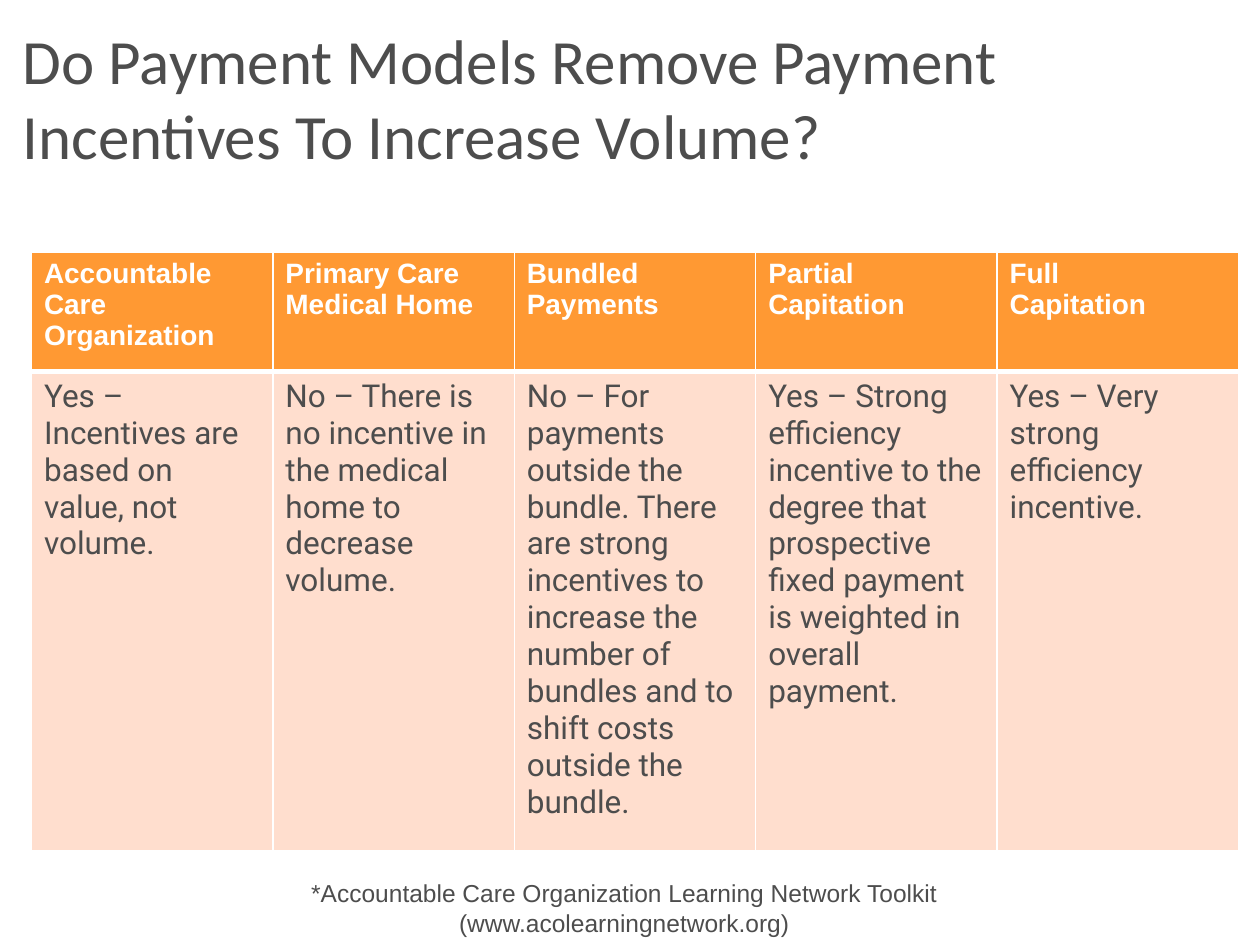
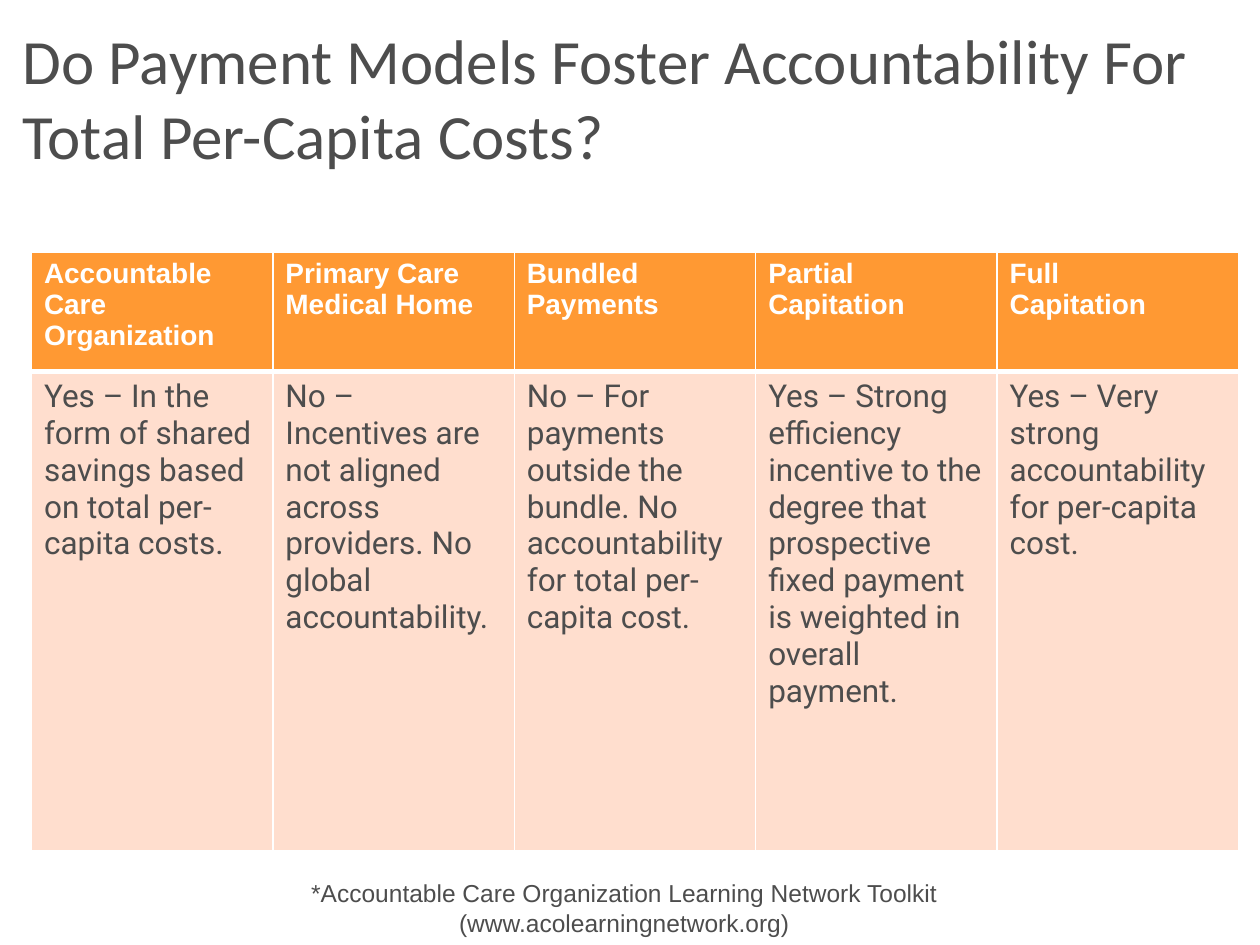
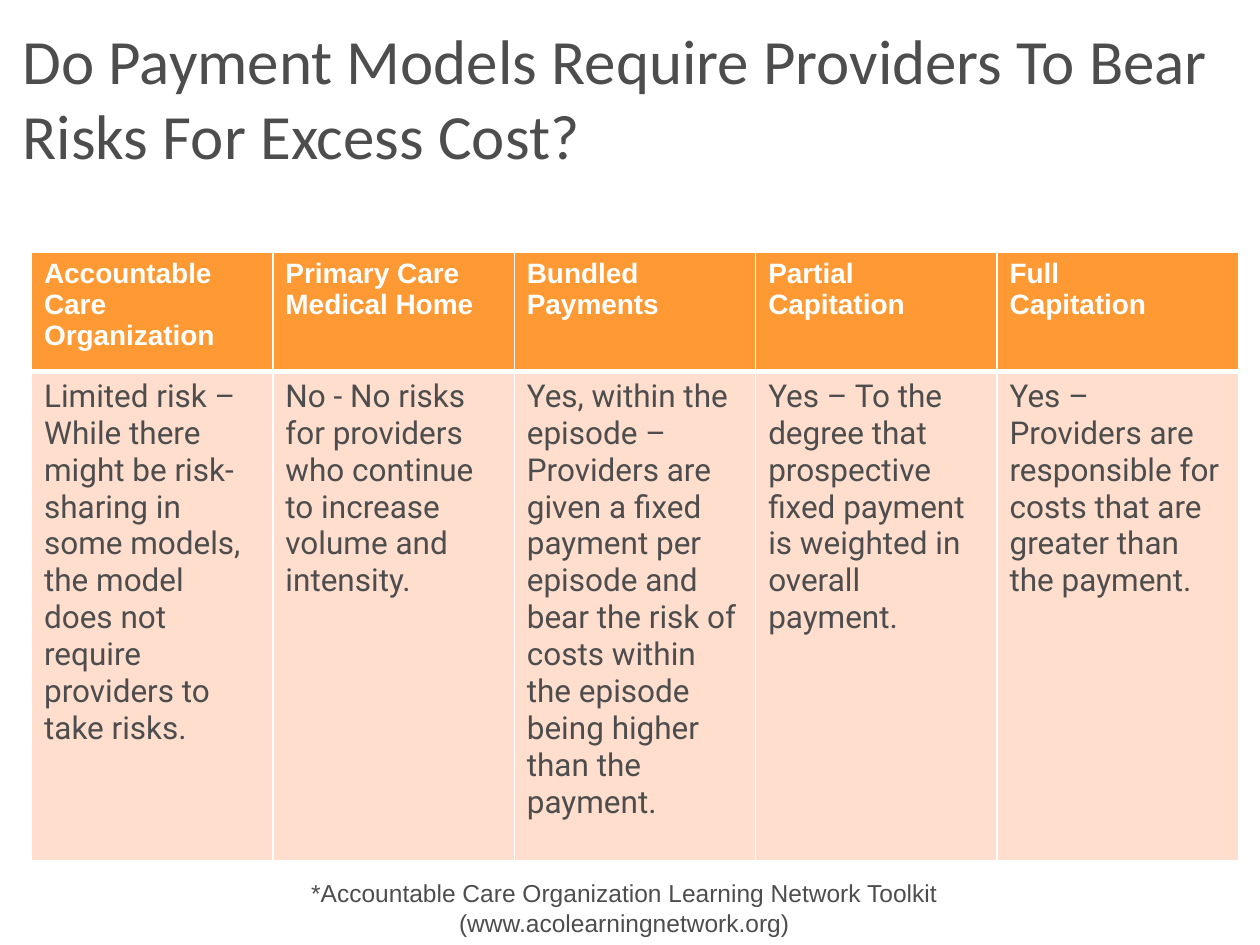
from dataclasses import dataclass

from lxml import etree
from pptx import Presentation
from pptx.dml.color import RGBColor
from pptx.enum import text
from pptx.oxml import ns
from pptx.util import Inches, Pt


@dataclass(frozen=True)
class Theme:
    ink: str = "4D4D4D"
    white: str = "FFFFFF"
    header_fill: str = "FF9933"
    body_fill: str = "FFDECE"
    title_font: str = "Calibri"
    label_font: str = "Arial"
    body_font: str = "Roboto"
    title_size: int = 36
    header_size: int = 16
    body_size: int = 18
    source_size: int = 14
    thin_line: int = 1
    thick_line: int = 3


theme = Theme()

HEADERS = [
    "Accountable Care Organization",
    "Primary Care Medical Home",
    "Bundled Payments",
    "Partial\nCapitation",
    "Full\nCapitation",
]
SOURCE = "*Accountable Care Organization Learning Network Toolkit (www.acolearningnetwork.org)"
HEADER_HEIGHT = 0.95

# Title, height of the answer row, answers by payment model
QUESTIONS = [
    (
        "Do Payment Models Remove Payment Incentives To Increase Volume?",
        3.8,
        [
            "Yes – Incentives are based on value, not volume.",
            "No – There is no incentive in the medical home to decrease volume.",
            "No – For payments outside the bundle. There are strong incentives to increase "
            "the number of bundles and to shift costs outside the bundle.",
            "Yes – Strong efficiency incentive to the degree that prospective fixed payment "
            "is weighted in overall payment.",
            "Yes – Very strong efficiency incentive.",
        ],
    ),
    (
        "Do Payment Models Foster Accountability For Total Per-Capita Costs?",
        3.8,
        [
            "Yes – In the form of shared savings based on total per-capita costs.",
            "No – Incentives are not aligned across providers. No global accountability.",
            "No – For payments outside the bundle. No accountability for total per-capita cost.",
            "Yes – Strong efficiency incentive to the degree that prospective fixed payment "
            "is weighted in overall payment.",
            "Yes – Very strong accountability for per-capita cost.",
        ],
    ),
    (
        "Do Payment Models Require Providers To Bear Risks For Excess Cost?",
        3.88,
        [
            "Limited risk – While there might be risk-sharing in some models, the model does "
            "not require providers to take risks.",
            "No - No risks for providers who continue to increase volume and intensity.",
            "Yes, within the episode – Providers are given a fixed payment per episode and bear "
            "the risk of costs within the episode being higher than the payment.",
            "Yes – To the degree that prospective fixed payment is weighted in overall payment.",
            "Yes – Providers are responsible for costs that are greater than the payment.",
        ],
    ),
]


def write_text(frame, content, font, size, color, bold=False, align=text.PP_ALIGN.LEFT):
    for index, line in enumerate(content.split("\n")):
        paragraph = frame.add_paragraph() if index else frame.paragraphs[0]
        paragraph.alignment = align
        run = paragraph.add_run()
        run.text = line
        run.font.name = font
        run.font.size = Pt(size)
        run.font.bold = bold
        run.font.color.rgb = RGBColor.from_string(color)


def set_borders(cell, top, bottom):
    properties = cell._tc.get_or_add_tcPr()
    widths = {"lnL": theme.thin_line, "lnR": theme.thin_line, "lnT": top, "lnB": bottom}
    for index, (side, width) in enumerate(widths.items()):
        line = etree.Element(ns.qn(f"a:{side}"), w=str(Pt(width)))
        fill = etree.SubElement(line, ns.qn("a:solidFill"))
        etree.SubElement(fill, ns.qn("a:srgbClr"), val=theme.white)
        properties.insert(index, line)


presentation = Presentation()
presentation.slide_width = Inches(10)
presentation.slide_height = Inches(7.5)
title_only = presentation.slide_layouts[5]

for question, answer_height, answers in QUESTIONS:
    slide = presentation.slides.add_slide(title_only)

    # Title
    title = slide.shapes.title
    title.left, title.top = Inches(0.08), Inches(0.38)
    title.width, title.height = Inches(9.67), Inches(0.78)
    title.text_frame.auto_size = text.MSO_AUTO_SIZE.NONE
    title.text_frame.vertical_anchor = text.MSO_ANCHOR.MIDDLE
    write_text(title.text_frame, question, theme.title_font, theme.title_size, theme.ink)

    # Table of payment models
    table = slide.shapes.add_table(
        2, len(HEADERS), Inches(0.25), Inches(2),
        Inches(9.58), Inches(HEADER_HEIGHT + answer_height),
    ).table
    table.rows[0].height = Inches(HEADER_HEIGHT)
    table.rows[1].height = Inches(answer_height)
    for column, (header, answer) in enumerate(zip(HEADERS, answers)):
        header_cell, answer_cell = table.cell(0, column), table.cell(1, column)
        for cell, fill in ((header_cell, theme.header_fill), (answer_cell, theme.body_fill)):
            cell.fill.solid()
            cell.fill.fore_color.rgb = RGBColor.from_string(fill)
        set_borders(header_cell, theme.thin_line, theme.thick_line)
        set_borders(answer_cell, theme.thick_line, theme.thin_line)
        write_text(header_cell.text_frame, header, theme.label_font, theme.header_size,
                   theme.white, bold=True)
        write_text(answer_cell.text_frame, answer, theme.body_font, theme.body_size, theme.ink)

    # Source line
    source = slide.shapes.add_textbox(Inches(1.33), Inches(6.92), Inches(7.25), Inches(0.57))
    source.text_frame.word_wrap = True
    source.text_frame.auto_size = text.MSO_AUTO_SIZE.SHAPE_TO_FIT_TEXT
    write_text(source.text_frame, SOURCE, theme.label_font, theme.source_size, theme.ink,
               align=text.PP_ALIGN.CENTER)

presentation.save("out.pptx")
